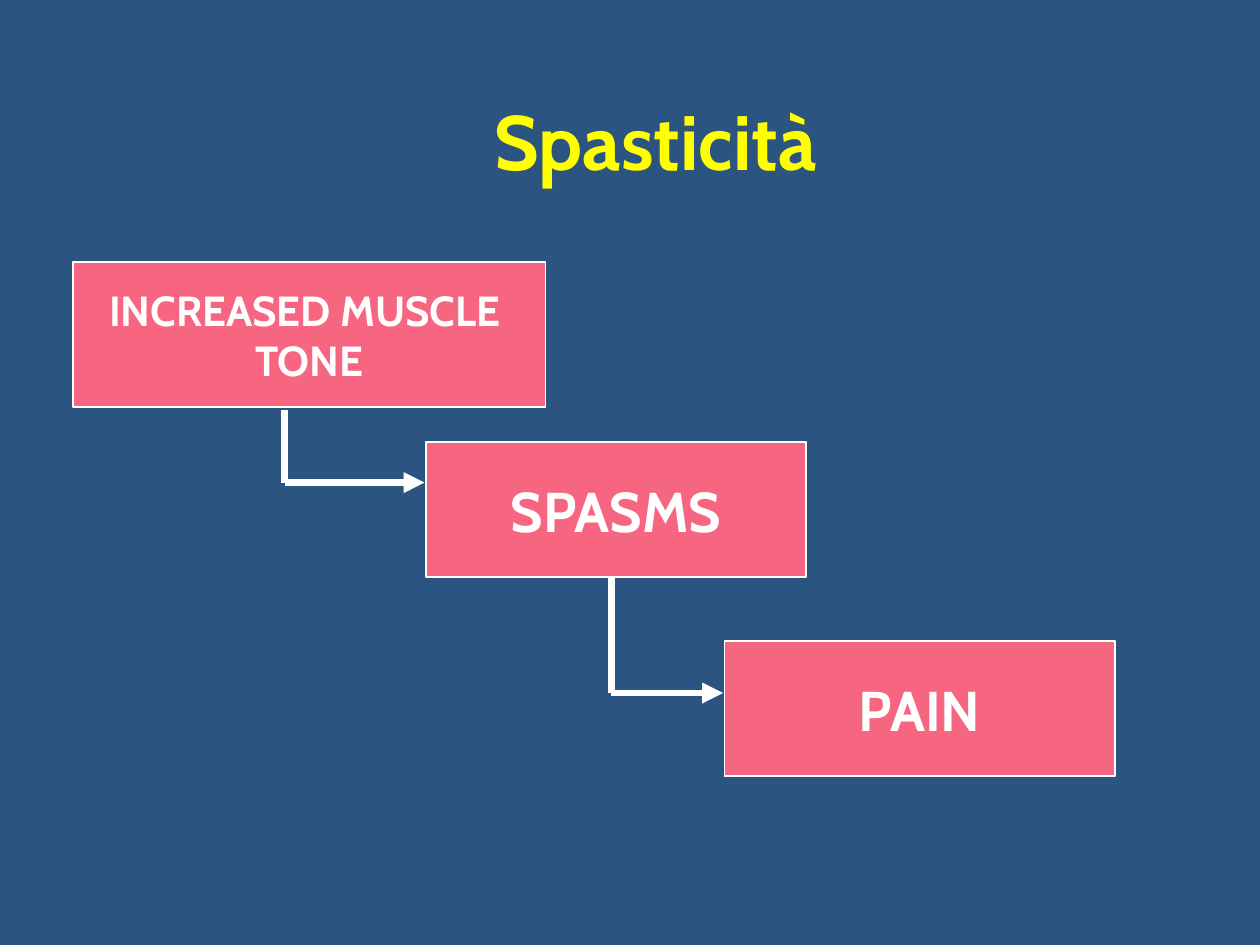
from dataclasses import dataclass

from lxml import etree
from pptx import Presentation
from pptx.dml.color import RGBColor
from pptx.enum import shapes, text
from pptx.oxml import ns
from pptx.util import Inches, Pt


@dataclass(frozen=True)
class Theme:
    back: RGBColor = RGBColor(0x2B, 0x54, 0x81)
    fill: RGBColor = RGBColor(0xF7, 0x66, 0x81)
    white: RGBColor = RGBColor(0xFF, 0xFF, 0xFF)
    yellow: RGBColor = RGBColor(0xFF, 0xFF, 0x00)
    font: str = "Cabin"
    title: int = 44
    large: int = 32
    small: int = 24
    edge: int = 1
    stroke: int = 4


THEME = Theme()


def write(frame, lines, size, color):
    """Fill a frame with centred bold lines."""
    frame.vertical_anchor = text.MSO_ANCHOR.MIDDLE
    frame.text = "\n".join(lines)
    for para in frame.paragraphs:
        para.alignment = text.PP_ALIGN.CENTER
        font = para.font
        font.name, font.size, font.bold = THEME.font, Pt(size), True
        font.color.rgb = color


def add_title(slide, words):
    title = slide.shapes.title
    title.left, title.top = Inches(0.83), Inches(0.75)
    title.width, title.height = Inches(8.75), Inches(0.72)
    write(title.text_frame, [words], THEME.title, THEME.yellow)


def add_box(slide, place, lines, size):
    box = slide.shapes.add_shape(
        shapes.MSO_SHAPE.RECTANGLE, *map(Inches, place))
    box.shadow.inherit = False
    box.fill.solid()
    box.fill.fore_color.rgb = THEME.fill
    box.line.color.rgb = THEME.white
    box.line.width = Pt(THEME.edge)
    box.text_frame.word_wrap = False
    write(box.text_frame, lines, size, THEME.white)


def add_line(slide, start, end, arrow=False):
    line = slide.shapes.add_connector(
        shapes.MSO_CONNECTOR.STRAIGHT, *map(Inches, start + end))
    line.line.color.rgb = THEME.white
    line.line.width = Pt(THEME.stroke)
    if arrow:
        etree.SubElement(line.line._get_or_add_ln(), ns.qn("a:tailEnd"),
                         type="triangle")
    etree.SubElement(line._element.spPr, ns.qn("a:effectLst"))


def add_elbow(slide, start, end):
    """Go down from start, then right to an arrowhead at end."""
    bend = (start[0], end[1])
    add_line(slide, start, bend)
    add_line(slide, bend, end, arrow=True)


def main():
    deck = Presentation()
    deck.slide_width, deck.slide_height = Inches(10), Inches(7.5)
    slide = deck.slides.add_slide(deck.slide_layouts[5])
    slide.background.fill.solid()
    slide.background.fill.fore_color.rgb = THEME.back

    add_title(slide, "Spasticità")

    # Cascade of symptoms
    add_box(slide, (0.58, 2.08, 3.75, 1.15),
            ["INCREASED MUSCLE ", "TONE"], THEME.small)
    add_box(slide, (3.38, 3.51, 3.02, 1.07), ["SPASMS"], THEME.large)
    add_box(slide, (5.75, 5.09, 3.1, 1.07), ["PAIN"], THEME.large)

    # Arrows from each step to the next
    add_elbow(slide, (2.26, 3.25), (3.37, 3.83))
    add_elbow(slide, (4.85, 4.58), (5.74, 5.5))

    deck.save("out.pptx")


if __name__ == "__main__":
    main()
